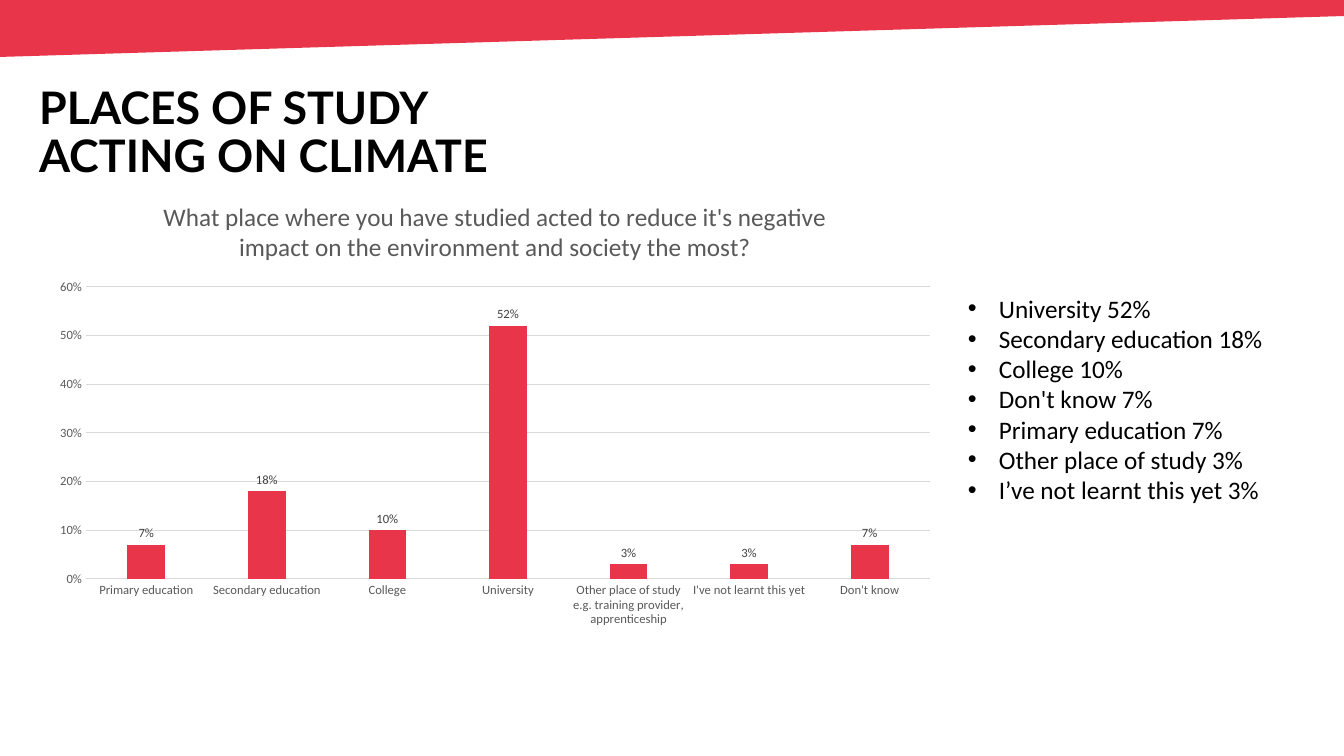
from lxml import etree
from pptx import Presentation
from pptx.chart.data import CategoryChartData
from pptx.dml.color import RGBColor
from pptx.enum.chart import XL_CHART_TYPE, XL_LABEL_POSITION, XL_TICK_MARK
from pptx.enum.text import MSO_ANCHOR, MSO_AUTO_SIZE, PP_ALIGN
from pptx.oxml import parse_xml
from pptx.oxml.ns import nsdecls, qn
from pptx.util import Emu, Pt

RED = RGBColor(0xE9, 0x35, 0x4A)
BLACK = RGBColor(0x00, 0x00, 0x00)
DARK_GREY = RGBColor(0x40, 0x40, 0x40)
GREY = RGBColor(0x59, 0x59, 0x59)
LIGHT_GREY = RGBColor(0xD9, 0xD9, 0xD9)

COLUMNS = XL_CHART_TYPE.COLUMN_CLUSTERED
ABOVE_BAR = XL_LABEL_POSITION.OUTSIDE_END
NO_TICK = XL_TICK_MARK.NONE
MIDDLE = MSO_ANCHOR.MIDDLE
GROW = MSO_AUTO_SIZE.SHAPE_TO_FIT_TEXT
LEFT = PP_ALIGN.LEFT

HEADING_FONT, BODY_FONT = "Lato", "Calibri"
PX_PER_INCH = 100.8

HEADING = "PLACES OF STUDY ACTING ON CLIMATE"
QUESTION = ("What place where you have studied acted to reduce it's negative "
            "impact on the environment and society the most?")
SHARES = {
    "Primary education": 0.07,
    "Secondary education": 0.18,
    "College": 0.10,
    "University": 0.52,
    "Other place of study e.g. training provider, apprenticeship": 0.03,
    "I've not learnt this yet": 0.03,
    "Don't know": 0.07,
}
RANKING = [
    "University 52%",
    "Secondary education 18%",
    "College 10%",
    "Don't know 7%",
    "Primary education 7%",
    "Other place of study 3%",
    "I’ve not learnt this yet 3%",
]


def px(length):
    return Emu(round(length * 914400 / PX_PER_INCH))


def style_font(font, name, size, color, bold=False):
    font.name, font.size, font.bold = name, Pt(size), bold
    font.color.rgb = color


class ClimateSlide:
    def __init__(self, prs):
        self.slide = prs.slides.add_slide(prs.slide_layouts[5])
        self.shapes = self.slide.shapes

    def band(self, points):
        builder = self.shapes.build_freeform(*points[0], scale=px(1))
        builder.add_line_segments(points[1:], close=True)
        band = builder.convert_to_shape()
        band.shadow.inherit = False
        band.fill.solid()
        band.fill.fore_color.rgb = RED
        band.line.fill.background()

    def heading(self, text, left, top, width, height):
        heading = self.shapes.title
        heading.left, heading.top = px(left), px(top)
        heading.width, heading.height = px(width), px(height)
        frame = heading.text_frame
        frame.text = text
        frame.word_wrap = True
        frame.auto_size = MSO_AUTO_SIZE.NONE
        frame.vertical_anchor = MIDDLE
        line = frame.paragraphs[0]
        line.alignment = LEFT
        line.line_spacing = 0.9
        style_font(line.runs[0].font, HEADING_FONT, 32, BLACK, bold=True)

    def bullets(self, items, left, top, width, height, indent):
        box = self.shapes.add_textbox(px(left), px(top), px(width), px(height))
        frame = box.text_frame
        frame.text = "\n".join(items)
        frame.word_wrap = True
        frame.auto_size = GROW
        for item in frame.paragraphs:
            props = item._p.get_or_add_pPr()
            props.set("marL", str(px(indent)))
            props.set("indent", str(-px(indent)))
            etree.SubElement(props, qn("a:buFont")).set("typeface", "Arial")
            etree.SubElement(props, qn("a:buChar")).set("char", "•")
            style_font(item.runs[0].font, BODY_FONT, 18, BLACK)

    def column_chart(self, question, shares, frame_box, plot_box):
        data = CategoryChartData(number_format="0%")
        data.categories = list(shares)
        data.add_series("Series 1", list(shares.values()))
        chart = self.shapes.add_chart(COLUMNS, *map(px, frame_box), data).chart
        style_font(chart.font, BODY_FONT, 10, BLACK)
        chart.has_legend = False

        # Question above the columns
        chart.has_title = True
        title = chart.chart_title
        title.include_in_layout = False
        title.text_frame.text = question
        style_font(title.text_frame.paragraphs[0].runs[0].font, BODY_FONT, 18, GREY)

        # Columns and their labels
        plot = chart.plots[0]
        plot.gap_width, plot.overlap = 219, -27
        plot.vary_by_categories = False
        columns = plot.series[0]
        columns.invert_if_negative = False
        columns.format.fill.solid()
        columns.format.fill.fore_color.rgb = RED
        plot.has_data_labels = True
        labels = plot.data_labels
        labels.show_value = True
        labels.number_format, labels.number_format_is_linked = "0%", False
        labels.position = ABOVE_BAR
        style_font(labels.font, BODY_FONT, 9, DARK_GREY)

        # Axes
        places, percent = chart.category_axis, chart.value_axis
        for axis in (places, percent):
            axis.major_tick_mark = axis.minor_tick_mark = NO_TICK
            style_font(axis.tick_labels.font, BODY_FONT, 9, GREY)
        percent.minimum_scale, percent.maximum_scale = 0, 0.6
        percent.major_unit = 0.1
        percent.tick_labels.number_format = "0%"
        percent.tick_labels.number_format_is_linked = False
        percent.format.line.fill.background()
        percent.has_major_gridlines = True
        for line in (places.format.line, percent.major_gridlines.format.line):
            line.color.rgb = LIGHT_GREY
            line.width = Pt(0.75)
        self.place_plot(chart, frame_box, plot_box)

    def place_plot(self, chart, frame_box, plot_box):
        left, top, width, height = frame_box
        x, y, w, h = plot_box
        shares = {"x": (x - left) / width, "y": (y - top) / height,
                  "w": w / width, "h": h / height}
        edges = "".join(f'<c:{edge}Mode val="edge"/>' for edge in "xy")
        sizes = "".join(f'<c:{key} val="{share:.4f}"/>' for key, share in shares.items())
        layout = parse_xml(
            f'<c:layout {nsdecls("c")}><c:manualLayout>'
            f'<c:layoutTarget val="inner"/>{edges}{sizes}'
            f'</c:manualLayout></c:layout>')
        plot_area = chart._chartSpace.chart.plotArea
        for automatic in plot_area.findall(qn("c:layout")):
            plot_area.remove(automatic)
        plot_area.insert(0, layout)


def main():
    prs = Presentation()
    prs.slide_width, prs.slide_height = px(1344), px(756)
    slide = ClimateSlide(prs)

    # Slanted band and heading
    slide.band([(-1, 0), (0, 57), (1346, 16), (1344, 0)])
    slide.heading(HEADING, 29, 79, 562, 110)

    # Survey answers as columns and as a ranking
    slide.column_chart(QUESTION, SHARES, (42, 180, 906, 457), (86, 287, 844, 292))
    slide.bullets(RANKING, 958, 288, 407, 224, indent=31)

    prs.save("out.pptx")


if __name__ == "__main__":
    main()
